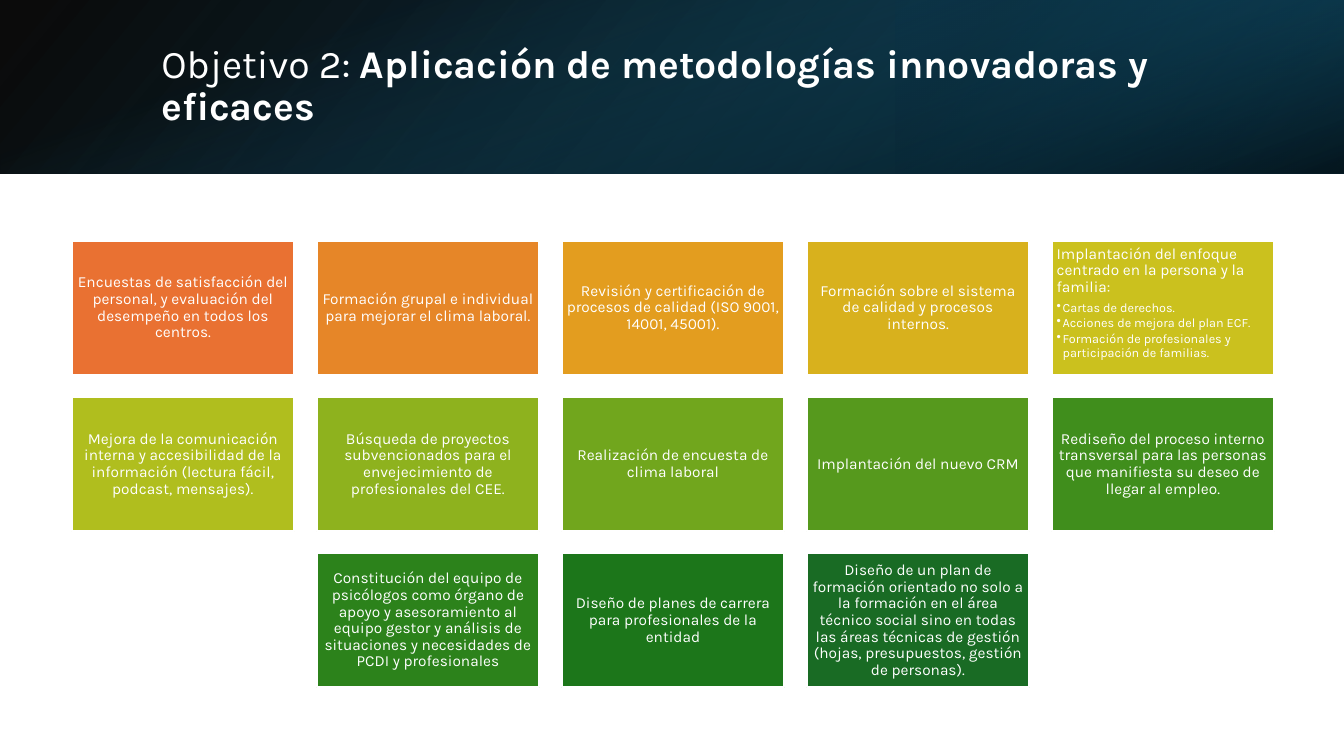
from lxml.etree import SubElement
from pptx import Presentation
from pptx.dml.color import RGBColor
from pptx.enum.shapes import MSO_SHAPE
from pptx.enum.text import MSO_ANCHOR, MSO_AUTO_SIZE, PP_ALIGN
from pptx.oxml.ns import qn
from pptx.util import Inches, Pt

SLIDE_WIDTH, SLIDE_HEIGHT = 13.33, 7.5
BAND_HEIGHT = 1.72
GRID_LEFT, GRID_TOP = 0.71, 2.39
CARD_WIDTH, CARD_HEIGHT, GAP = 2.21, 1.33, 0.22
FONT = "Karla"

COLORS = {
    "white": "FFFFFF",
    "black": "000000",
    "navy": "104862",
    "deep": "0B3041",
    "teal": "156082",
    "orange": "E97132",
    "tangerine": "E68628",
    "amber": "E39D1F",
    "gold": "D8B11D",
    "mustard": "CBC11E",
    "lime": "B0BE1E",
    "pear": "8EB21E",
    "leaf": "71A61D",
    "grass": "56991D",
    "fern": "408E1C",
    "forest": "2C821B",
    "emerald": "1C761A",
    "pine": "196B24",
}

FAMILY_ITEMS = [
    "Cartas de derechos.",
    "Acciones de mejora del plan ECF.",
    "Formación de profesionales y participación de familias.",
]

CARD_ROWS = [
    (0, [
        ("orange", "Encuestas de satisfacción del personal, y evaluación del desempeño en todos los centros.", []),
        ("tangerine", "Formación grupal e individual para mejorar el clima laboral.", []),
        ("amber", "Revisión y certificación de procesos de calidad (ISO 9001, 14001, 45001).", []),
        ("gold", "Formación sobre el sistema de calidad y procesos internos.", []),
        ("mustard", "Implantación del enfoque centrado en la persona y la familia:", FAMILY_ITEMS),
    ]),
    (0, [
        ("lime", "Mejora de la comunicación interna y accesibilidad de la información "
                 "(lectura fácil, podcast, mensajes).", []),
        ("pear", "Búsqueda de proyectos subvencionados para el envejecimiento de profesionales del CEE.", []),
        ("leaf", "Realización de encuesta de clima laboral", []),
        ("grass", "Implantación del nuevo CRM", []),
        ("fern", "Rediseño del proceso interno transversal para las personas que manifiesta "
                 "su deseo de llegar al empleo.", []),
    ]),
    (1, [
        ("forest", "Constitución del equipo de psicólogos como órgano de apoyo y asesoramiento al equipo "
                   "gestor y análisis de situaciones y necesidades de PCDI y profesionales", []),
        ("emerald", "Diseño de planes de carrera para profesionales de la entidad", []),
        ("pine", "Diseño de un plan de formación orientado no solo a la formación en el área técnico social "
                 "sino en todas las áreas técnicas de gestión (hojas, presupuestos, gestión de personas).", []),
    ]),
]


def color(name):
    """Return the named colour as an RGB value."""
    return RGBColor.from_string(COLORS[name])


def style_font(font, size, bold=False):
    """Apply the slide's white typeface."""
    font.name = FONT
    font.size = Pt(size)
    font.bold = bold
    font.color.rgb = color("white")


def add_rectangle(slide, left, top, width, height):
    """Add a rectangle without shadow, measured in inches."""
    shape = slide.shapes.add_shape(
        MSO_SHAPE.RECTANGLE, Inches(left), Inches(top), Inches(width), Inches(height))
    shape.shadow.inherit = False
    return shape


def add_gradient_band(slide, box, stops, angle, rotation=0, flipped=False):
    """Add a band with a translucent linear gradient at a clockwise angle."""
    shape = add_rectangle(slide, *box)
    shape.rotation = rotation
    shape.line.fill.background()
    properties = shape.element.spPr
    if flipped:
        properties.find(qn("a:xfrm")).set("flipH", "1")
    shape.fill.gradient()
    shape.fill.gradient_angle = 360 - angle
    for stop, (position, name, _) in zip(shape.fill.gradient_stops, stops):
        stop.position = position / 100
        stop.color.rgb = color(name)
    for element, (_, _, opacity) in zip(properties.iter(qn("a:srgbClr")), stops):
        SubElement(element, qn("a:alpha")).set("val", str(opacity * 1000))


def add_header(slide):
    """Layer the three gradients of the header."""
    add_gradient_band(slide, (0, 0, SLIDE_WIDTH, BAND_HEIGHT),
                      [(0, "black", 96), (100, "navy", 100)], 140, flipped=True)
    add_gradient_band(slide, (SLIDE_WIDTH * 2 / 3, 0, SLIDE_WIDTH / 3, BAND_HEIGHT),
                      [(19, "deep", 68), (100, "teal", 79)], 320, 180, True)
    offset = (SLIDE_WIDTH - BAND_HEIGHT) / 2
    add_gradient_band(slide, (offset, -offset, BAND_HEIGHT, SLIDE_WIDTH),
                      [(23, "teal", 0), (99, "black", 74)], 340, 90)


def format_title(slide):
    """Place the title over the header and fill it."""
    title = slide.shapes.title
    title.left, title.top = Inches(1.5), Inches(0.38)
    title.width, title.height = Inches(10.98), Inches(0.96)
    title.element.getparent().append(title.element)
    frame = title.text_frame
    frame.auto_size = MSO_AUTO_SIZE.NONE
    frame.vertical_anchor = MSO_ANCHOR.MIDDLE
    paragraph = frame.paragraphs[0]
    paragraph.alignment = PP_ALIGN.LEFT
    paragraph.line_spacing = 0.9
    for text, bold in (("Objetivo 2: ", False),
                       ("Aplicación de metodologías innovadoras y eficaces", True)):
        run = paragraph.add_run()
        run.text = text
        style_font(run.font, 28, bold)


def format_paragraph(paragraph, text, size, alignment, space_after):
    """Fill and style one paragraph of a card."""
    paragraph.text = text
    paragraph.alignment = alignment
    paragraph.line_spacing = 0.9
    paragraph.space_after = Pt(space_after)
    style_font(paragraph.runs[0].font, size)


def add_bullet(paragraph):
    """Give a paragraph a bullet with a hanging indent."""
    paragraph.level = 1
    properties = paragraph._p.get_or_add_pPr()
    indent = Inches(0.06)
    properties.set("marL", str(indent))
    properties.set("indent", str(-indent))
    SubElement(properties, qn("a:buChar")).set("char", "•")


def add_card(slide, column, row, fill, text, items):
    """Add one objective card at a grid cell."""
    shape = add_rectangle(slide, GRID_LEFT + column * (CARD_WIDTH + GAP),
                          GRID_TOP + row * (CARD_HEIGHT + GAP), CARD_WIDTH, CARD_HEIGHT)
    shape.fill.solid()
    shape.fill.fore_color.rgb = color(fill)
    shape.line.color.rgb = color("white")
    shape.line.width = Pt(1.5)
    frame = shape.text_frame
    frame.word_wrap = True
    frame.margin_left = frame.margin_right = Inches(0.05)
    frame.margin_top = frame.margin_bottom = Inches(0.05)
    frame.vertical_anchor = MSO_ANCHOR.TOP if items else MSO_ANCHOR.MIDDLE
    alignment = PP_ALIGN.LEFT if items else PP_ALIGN.CENTER
    format_paragraph(frame.paragraphs[0], text, 11, alignment, 4 if items else 0)
    for item in items:
        paragraph = frame.add_paragraph()
        add_bullet(paragraph)
        format_paragraph(paragraph, item, 9, alignment, 1.35)


def main():
    """Build and save the slide."""
    presentation = Presentation()
    presentation.slide_width = Inches(SLIDE_WIDTH)
    presentation.slide_height = Inches(SLIDE_HEIGHT)
    slide = presentation.slides.add_slide(presentation.slide_layouts[5])
    add_header(slide)
    format_title(slide)
    for row, (first_column, cards) in enumerate(CARD_ROWS):
        for column, card in enumerate(cards, first_column):
            add_card(slide, column, row, *card)
    presentation.save("out.pptx")


if __name__ == "__main__":
    main()
